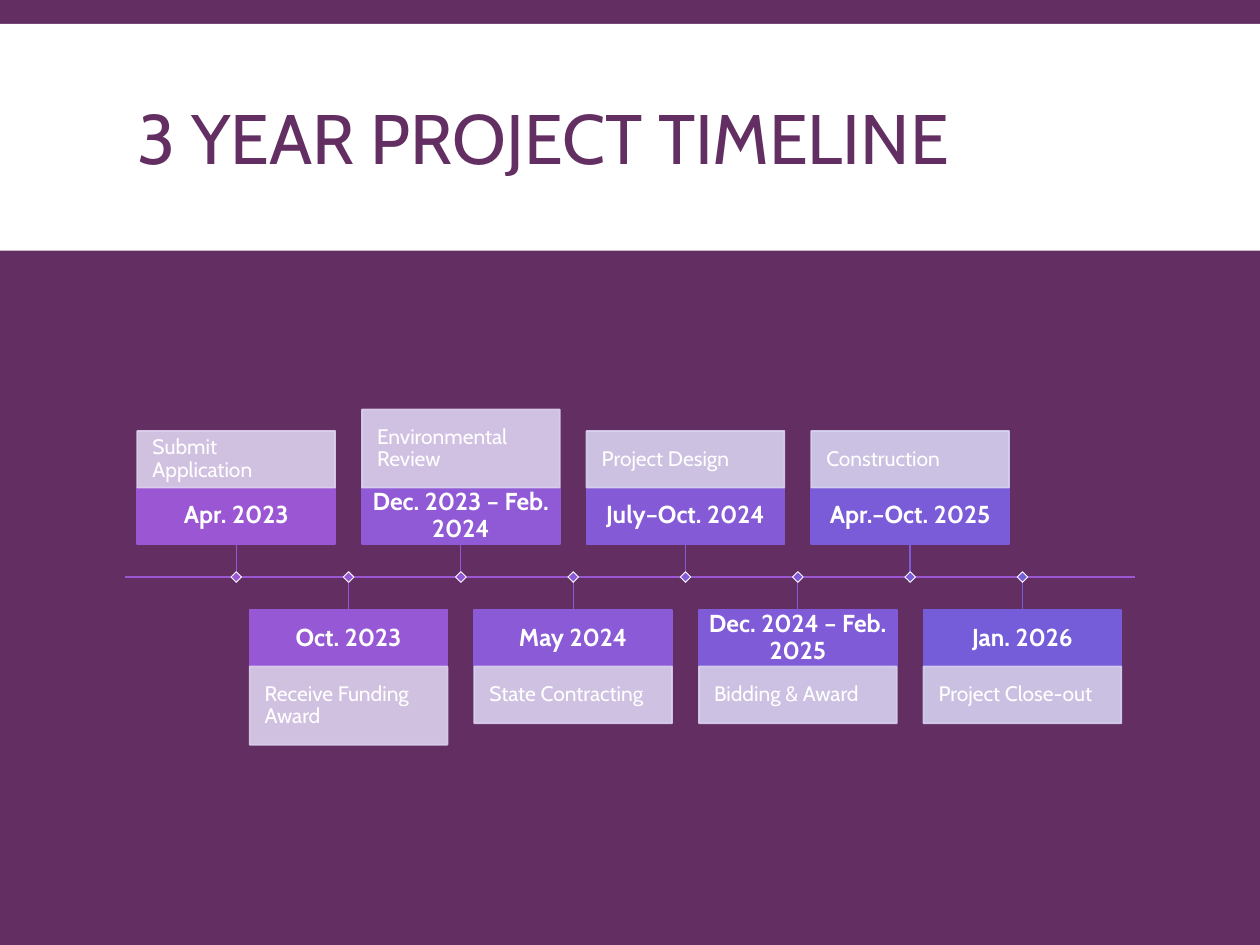
"""Build the three-year project timeline slide."""
import lxml.etree
import pptx
import pptx.dml.color
import pptx.enum.shapes
import pptx.enum.text
import pptx.oxml.ns
import pptx.util

Inches, Pt = pptx.util.Inches, pptx.util.Pt
RGB = pptx.dml.color.RGBColor
ALIGN = pptx.enum.text.PP_ALIGN
qn = pptx.oxml.ns.qn

WHITE, PLUM = RGB.from_string("FFFFFF"), RGB.from_string("632E62")
THEME = {
    "ramps": {"date": ("9B57D3", "755DD9"), "label": ("DED1EF", "D6D2F1")},
    "title": {
        "frame": {},
        "paragraph": {"alignment": ALIGN.LEFT, "line_spacing": 0.85},
        "font": {"name": "Cabin", "size": Pt(40), "bold": False},
        "colour": PLUM,
    },
    "date": {
        "frame": dict.fromkeys(("margin_left", "margin_top", "margin_right", "margin_bottom"), Inches(0.08)),
        "paragraph": {"alignment": ALIGN.CENTER, "line_spacing": 0.9},
        "font": {"name": "Cabin", "size": Pt(14), "bold": True},
        "colour": WHITE,
    },
    "label": {
        "frame": dict.fromkeys(("margin_left", "margin_top", "margin_right", "margin_bottom"), Inches(0.12)),
        "paragraph": {"alignment": ALIGN.LEFT, "line_spacing": 0.9},
        "font": {"name": "Cabin", "size": Pt(12), "bold": False},
        "colour": WHITE,
    },
}
WIDTH, HEIGHT = 10, 7.5
ROW, TALL_ROW, STEM, MARKER = 0.45, 0.62, 0.26, 0.06
CARD_LEFT, CARD_WIDTH = 1.09, 1.57
AXIS_LEFT, AXIS_RIGHT, AXIS_Y = 0.99, 9.01, 4.58

milestones = [
    ("Apr. 2023", "Submit Application", ROW),
    ("Oct. 2023", "Receive Funding Award", TALL_ROW),
    ("Dec. 2023 – Feb. 2024", "Environmental Review", TALL_ROW),
    ("May 2024", "State Contracting", ROW),
    ("July–Oct. 2024", "Project Design", ROW),
    ("Dec. 2024 – Feb. 2025", "Bidding & Award", ROW),
    ("Apr.–Oct. 2025", "Construction", ROW),
    ("Jan. 2026", "Project Close-out", ROW),
]
last = len(milestones) - 1
column = 6.24 / last
shades = {
    part: [
        RGB(*(round(a + (b - a) * step / last) for a, b in zip(*map(RGB.from_string, ramp))))
        for step in range(last + 1)
    ]
    for part, ramp in THEME["ramps"].items()
}

deck = pptx.Presentation()
deck.slide_width, deck.slide_height = Inches(WIDTH), Inches(HEIGHT)
slide = deck.slides.add_slide(deck.slide_layouts[5])
slide.background.fill.solid()
slide.background.fill.fore_color.rgb = PLUM


def add_block(left, top, width, height, colour, edge, weight, opacity=100):
    block = slide.shapes.add_shape(
        pptx.enum.shapes.MSO_SHAPE.RECTANGLE, *map(Inches, (left, top, width, height))
    )
    block.shadow.inherit = False
    block.fill.solid()
    block.fill.fore_color.rgb = colour
    block.line.color.rgb = edge
    block.line.width = Pt(weight)
    if opacity < 100:
        for tone in block.element.spPr.iter(qn("a:srgbClr")):
            lxml.etree.SubElement(tone, qn("a:alpha"), val=str(opacity * 1000))
    return block


def write(shape, text, style):
    frame = shape.text_frame
    frame.text = text
    frame.word_wrap = True
    frame.auto_size = pptx.enum.text.MSO_AUTO_SIZE.NONE
    frame.vertical_anchor = pptx.enum.text.MSO_ANCHOR.MIDDLE
    paragraph = frame.paragraphs[0]
    font = paragraph.runs[0].font
    for target, values in ((frame, style["frame"]), (paragraph, style["paragraph"]), (font, style["font"])):
        for name, value in values.items():
            setattr(target, name, value)
    font.color.rgb = style["colour"]


heading = slide.shapes.title
for name, value in {"left": 0.99, "top": 0.31, "width": 8.03, "height": 1.65}.items():
    setattr(heading, name, Inches(value))
write(heading, "3 YEAR PROJECT TIMELINE", THEME["title"])
band = add_block(0, 0.19, WIDTH, 1.8, WHITE, WHITE, 0)
band.line.fill.background()
heading.element.addprevious(band.element)

straight = pptx.enum.shapes.MSO_CONNECTOR.STRAIGHT
axis = slide.shapes.add_connector(straight, *map(Inches, (AXIS_LEFT, AXIS_Y, AXIS_RIGHT, AXIS_Y)))
axis.line.color.rgb = shades["date"][0]
axis.line.width = Pt(1)
lxml.etree.SubElement(axis.element.spPr, qn("a:effectLst"))

for index, (date, label, label_height) in enumerate(milestones):
    above = index % 2 == 0
    left = CARD_LEFT + index * column
    centre = left + CARD_WIDTH / 2
    date_top = AXIS_Y - STEM - ROW if above else AXIS_Y + STEM
    label_top = date_top - label_height if above else date_top + ROW
    shade, tint = shades["date"][index], shades["label"][index]

    date_card = add_block(left, date_top, CARD_WIDTH, ROW, shade, shade, 1)
    write(date_card, date, THEME["date"])
    label_card = add_block(left, label_top, CARD_WIDTH, label_height, tint, tint, 1, 90)
    write(label_card, label, THEME["label"])

    stem = slide.shapes.add_connector(straight, *map(Inches, (centre, AXIS_Y, centre, AXIS_Y)))
    stem.begin_connect(date_card, 2 if above else 0)
    stem.line.color.rgb = shade
    stem.line.width = Pt(0.75)
    lxml.etree.SubElement(stem.element.spPr, qn("a:effectLst"))

    marker = add_block(centre - MARKER / 2, AXIS_Y - MARKER / 2, MARKER, MARKER, shade, WHITE, 0.5)
    marker.rotation = 45

deck.save("out.pptx")
